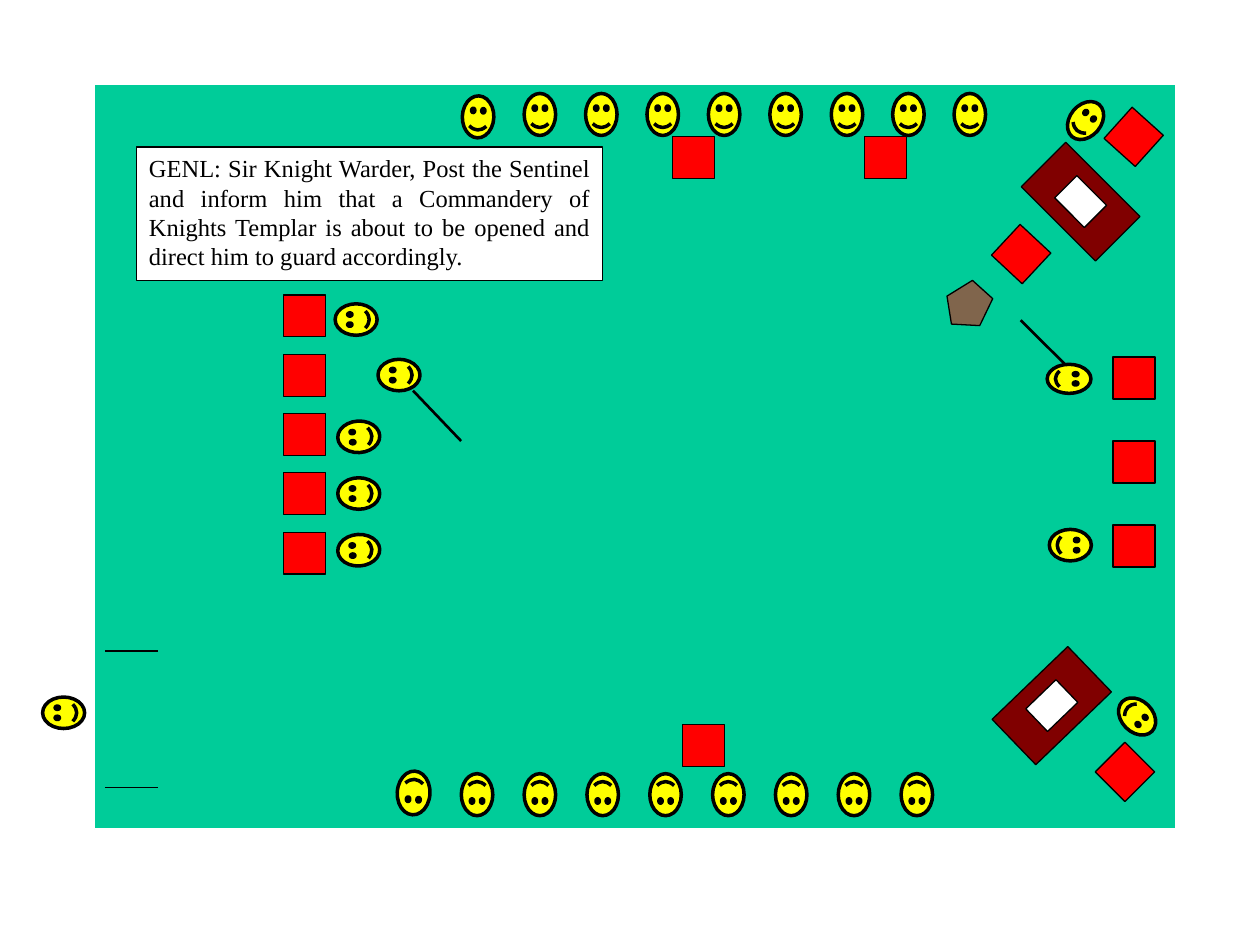
from lxml import etree
from pptx import Presentation
from pptx.dml.color import RGBColor
from pptx.enum.shapes import MSO_CONNECTOR, MSO_SHAPE
from pptx.enum.text import MSO_ANCHOR, PP_ALIGN
from pptx.oxml.ns import qn
from pptx.util import Pt

RECT = MSO_SHAPE.RECTANGLE
FACE = MSO_SHAPE.SMILEY_FACE
PENTAGON = MSO_SHAPE.REGULAR_PENTAGON
STRAIGHT = MSO_CONNECTOR.STRAIGHT
JUSTIFY = PP_ALIGN.JUSTIFY
TOP = MSO_ANCHOR.TOP

BLACK, WHITE = "000000", "FFFFFF"
GREEN, RED, MAROON, YELLOW = "00CC99", "FF0000", "800000", "FFFF00"
SEAT = 24
FACE_W, FACE_H = 18, 24


def rgb(color):
    return RGBColor.from_string(color)


def add_block(s, kind, box, fill, rot=0, line=BLACK, weight=0.75):
    sp = s.shapes.add_shape(kind, *(Pt(v) for v in box))
    sp.shadow.inherit = False
    sp.rotation = rot
    sp.fill.solid()
    sp.fill.fore_color.rgb = rgb(fill)
    sp.line.color.rgb = rgb(line)
    sp.line.width = Pt(weight)
    return sp


def add_seat(s, x, y, rot=0):
    add_block(s, RECT, (x, y, SEAT, SEAT), RED, rot)


def add_face(s, x, y, rot=0, w=FACE_W, h=FACE_H):
    add_block(s, FACE, (x, y, w, h), YELLOW, rot, weight=2)


def add_line(s, x1, y1, x2, y2, weight):
    cn = s.shapes.add_connector(STRAIGHT, Pt(x1), Pt(y1), Pt(x2), Pt(y2))
    cn.line.color.rgb = rgb(BLACK)
    cn.line.width = Pt(weight)
    etree.SubElement(cn._element.spPr, qn("a:effectLst"))


def add_hall(s, x, y, w, h):
    add_block(s, RECT, (x, y, w, h), GREEN, line=WHITE, weight=1)
    for door in (324, 402):
        add_line(s, x + 6, y + door, x + 36, y + door, 0.75)
    add_face(s, x - 26.64, y + 347.3, 270)


def add_north_row(s, x, y):
    add_face(s, x, y + 1.4, 2)
    for i in range(8):
        add_face(s, x + 35.3 + 35.1 * i, y, 0)
    for seat in (120, 230):
        add_seat(s, x + seat, y + 24.5)


def add_south_row(s, x, y):
    add_face(s, x, y - 1.5, 183, 18.7, 25)
    for i in range(8):
        add_face(s, x + 36.6 + 35.9 * i, y, 180)
    add_seat(s, x + 163.2, y - 28)


def add_west_column(s, x, y):
    for i in range(5):
        add_seat(s, x, y + 33.9 * i)
    faces = ((32.5, 2.1, 270), (57, 33.8, 270), (34, 69.1, 267),
             (34, 101.5, 270), (34, 133.9, 267))
    for dx, dy, rot in faces:
        add_face(s, x + dx, y + dy, rot)
    add_line(s, x + 74, y + 54.7, x + 101.5, y + 83.5, 1.5)


def add_east_column(s, x, y):
    for i in range(3):
        add_seat(s, x, y + 48 * i)
    add_line(s, x - 52.8, y - 21, x - 27.6, y + 4, 1.5)
    add_face(s, x - 33.4, y, 90, 16.6, 25)
    add_face(s, x - 33.4, y + 95.5, 90)


def add_table_with_book(s, x, y, rot):
    w, h, book_w, book_h = 60, 36, 24, 18
    add_block(s, RECT, (x, y, w, h), MAROON, rot)
    book = (x + (w - book_w) / 2, y + (h - book_h) / 2, book_w, book_h)
    add_block(s, RECT, book, WHITE, rot)


def add_northeast_corner(s, x, y):
    add_table_with_book(s, x, y, 45)
    add_seat(s, x + 48.3, y - 31, 42)
    add_seat(s, x - 16, y + 36, 43)
    add_face(s, x + 23.8, y - 40.3, 40)
    pentagon = add_block(s, PENTAGON, (x - 47.5, y + 64.8, 25.2, 26.6), RED, 222)
    color = pentagon.fill._xPr.find(".//" + qn("a:srgbClr"))
    etree.SubElement(color, qn("a:alpha"), val="50000")


def add_southeast_corner(s, x, y):
    add_table_with_book(s, x, y, 136.1)
    add_face(s, x + 69.8, y + 12.2, 135)
    add_seat(s, x + 59.8, y + 43.9, 45)


def add_speech(s, x, y, w, h, text):
    tf = add_block(s, RECT, (x, y, w, h), WHITE).text_frame
    tf.word_wrap = True
    tf.vertical_anchor = TOP
    p = tf.paragraphs[0]
    p.text = text
    p.alignment = JUSTIFY
    p.font.name = "Times New Roman"
    p.font.size = Pt(14)
    p.font.color.rgb = rgb(BLACK)


def main():
    prs = Presentation()
    prs.slide_width, prs.slide_height = Pt(720), Pt(540)
    s = prs.slides.add_slide(prs.slide_layouts[6])
    add_hall(s, 54, 48, 618, 426)
    add_north_row(s, 264.2, 53.4)
    add_south_row(s, 227, 442.1)
    add_west_column(s, 162, 168.5)
    add_east_column(s, 636, 204)
    add_northeast_corner(s, 587.5, 97.2)
    add_southeast_corner(s, 571, 385.2)
    add_speech(s, 78, 84, 266.4, 76.3,
               "GENL: Sir Knight Warder, Post the Sentinel and inform him that "
               "a Commandery of Knights Templar is about to be opened and "
               "direct him to guard accordingly.")
    prs.save("out.pptx")


if __name__ == "__main__":
    main()
